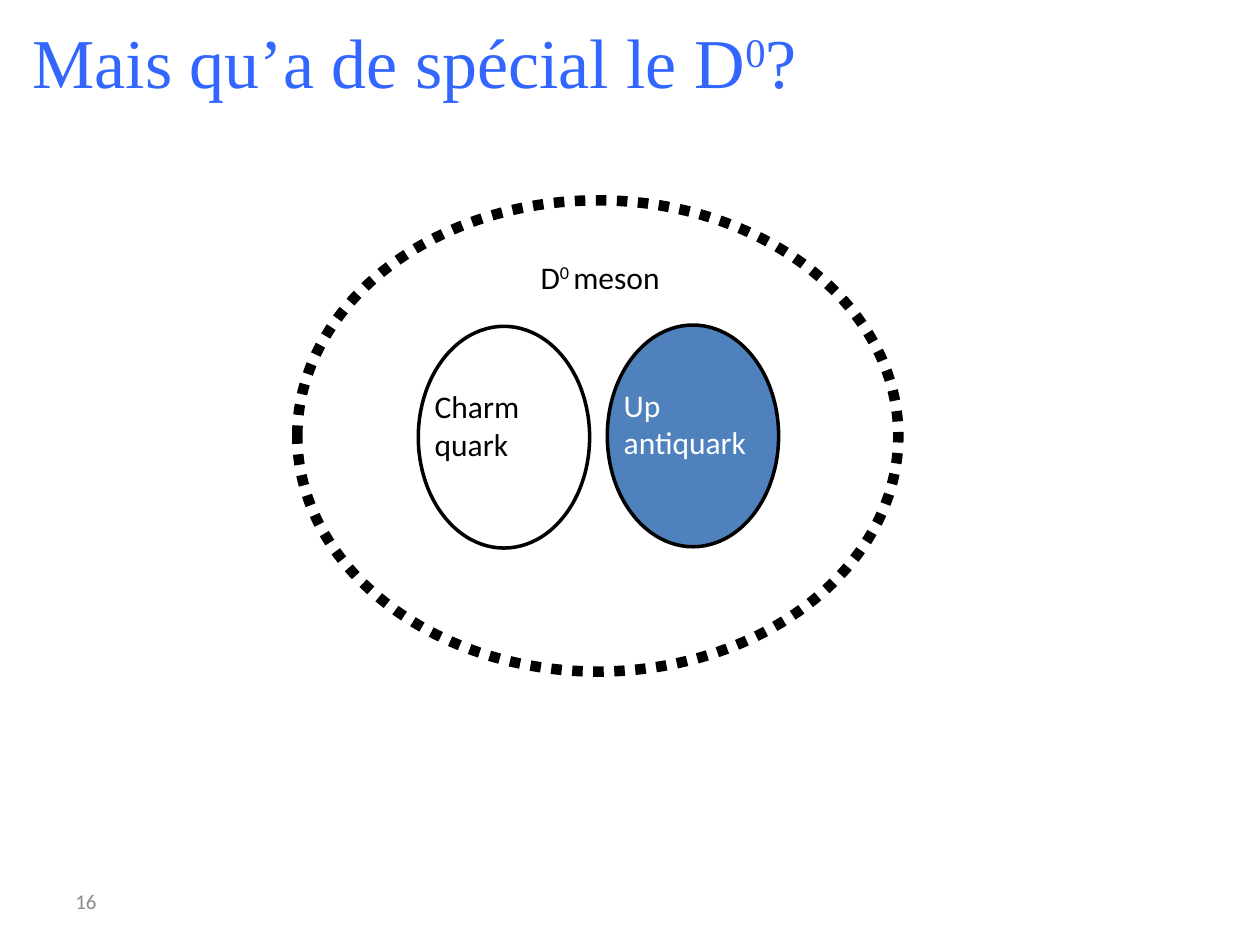
from dataclasses import dataclass

from pptx import Presentation
from pptx.dml.color import RGBColor
from pptx.enum.dml import MSO_LINE
from pptx.enum.shapes import MSO_SHAPE
from pptx.enum.text import MSO_ANCHOR, PP_ALIGN
from pptx.util import Inches, Pt


@dataclass(frozen=True)
class Theme:
    heading_font: str = "Times New Roman"
    body_font: str = "Calibri"
    heading_size: int = 40
    label_size: int = 18
    number_size: int = 12
    heading: str = "3366FF"
    ink: str = "000000"
    light: str = "FFFFFF"
    antiquark: str = "4F81BD"
    muted: str = "8C8C8C"


THEME = Theme()
QUARK_SIZE = (1.36, 1.76)
LABEL_OFFSET = (0.13, 0.48)
LABEL_SIZE = (1.09, 0.69)


def box(left, top, width, height):
    return [Inches(length) for length in (left, top, width, height)]


def write_text(frame, paragraphs, size=THEME.label_size, font=THEME.body_font,
               color=THEME.ink, anchor=MSO_ANCHOR.TOP, wrap=True, margins=(0, 0)):
    frame.word_wrap = wrap
    frame.vertical_anchor = anchor
    frame.margin_left = frame.margin_right = Inches(margins[0])
    frame.margin_top = frame.margin_bottom = Inches(margins[1])
    for index, runs in enumerate(paragraphs):
        paragraph = frame.add_paragraph() if index else frame.paragraphs[0]
        paragraph.alignment = PP_ALIGN.LEFT
        for words, raised in runs:
            run = paragraph.add_run()
            run.text = words
            run.font.size = Pt(size)
            run.font.name = font
            run.font.color.rgb = RGBColor.from_string(color)
            if raised:
                run.font._element.set("baseline", str(raised * 1000))


def add_title(slide, runs):
    title = slide.shapes.title
    title.left, title.top, title.width, title.height = box(0.26, 0.15, 9.98, 1.04)
    write_text(title.text_frame, [runs], size=THEME.heading_size,
               font=THEME.heading_font, color=THEME.heading)


def add_label(slide, area, paragraphs, **text_format):
    label = slide.shapes.add_textbox(*box(*area))
    write_text(label.text_frame, paragraphs, **text_format)
    return label


def add_oval(slide, area, weight, fill=None, dash=None):
    oval = slide.shapes.add_shape(MSO_SHAPE.OVAL, *box(*area))
    oval.shadow.inherit = False
    if fill:
        oval.fill.solid()
        oval.fill.fore_color.rgb = RGBColor.from_string(fill)
    else:
        oval.fill.background()
    oval.line.color.rgb = RGBColor.from_string(THEME.ink)
    oval.line.width = Pt(weight)
    if dash:
        oval.line.dash_style = dash


def add_quark(slide, left, top, paragraphs, color=THEME.ink, fill=None):
    add_oval(slide, (left, top, *QUARK_SIZE), 2, fill=fill)
    label_area = (left + LABEL_OFFSET[0], top + LABEL_OFFSET[1], *LABEL_SIZE)
    label = add_label(slide, label_area, paragraphs, color=color)
    if fill:
        label.fill.solid()
        label.fill.fore_color.rgb = RGBColor.from_string(fill)


def main():
    deck = Presentation()
    deck.slide_width, deck.slide_height = Inches(10), Inches(7.5)
    slide = deck.slides.add_slide(deck.slide_layouts[5])

    add_title(slide, [("Mais qu’a de spécial le D", 0), ("0", 30), ("?", 0)])
    add_label(slide, (0.5, 6.95, 2.33, 0.4), [[("16", 0)]],
              size=THEME.number_size, color=THEME.muted,
              anchor=MSO_ANCHOR.MIDDLE, margins=(0.1, 0.05))
    add_oval(slide, (2.36, 1.59, 4.77, 3.74), 6, dash=MSO_LINE.ROUND_DOT)
    add_label(slide, (4.29, 2.05, 0.99, 0.3),
              [[("D", 0), ("0 ", 32), ("meson", 0)]], wrap=False)
    add_quark(slide, 3.32, 2.59, [[("Charm quark", 0)]])
    add_quark(slide, 4.82, 2.58, [[("Up", 0)], [("antiquark", 0)]],
              color=THEME.light, fill=THEME.antiquark)

    deck.save("out.pptx")


if __name__ == "__main__":
    main()
